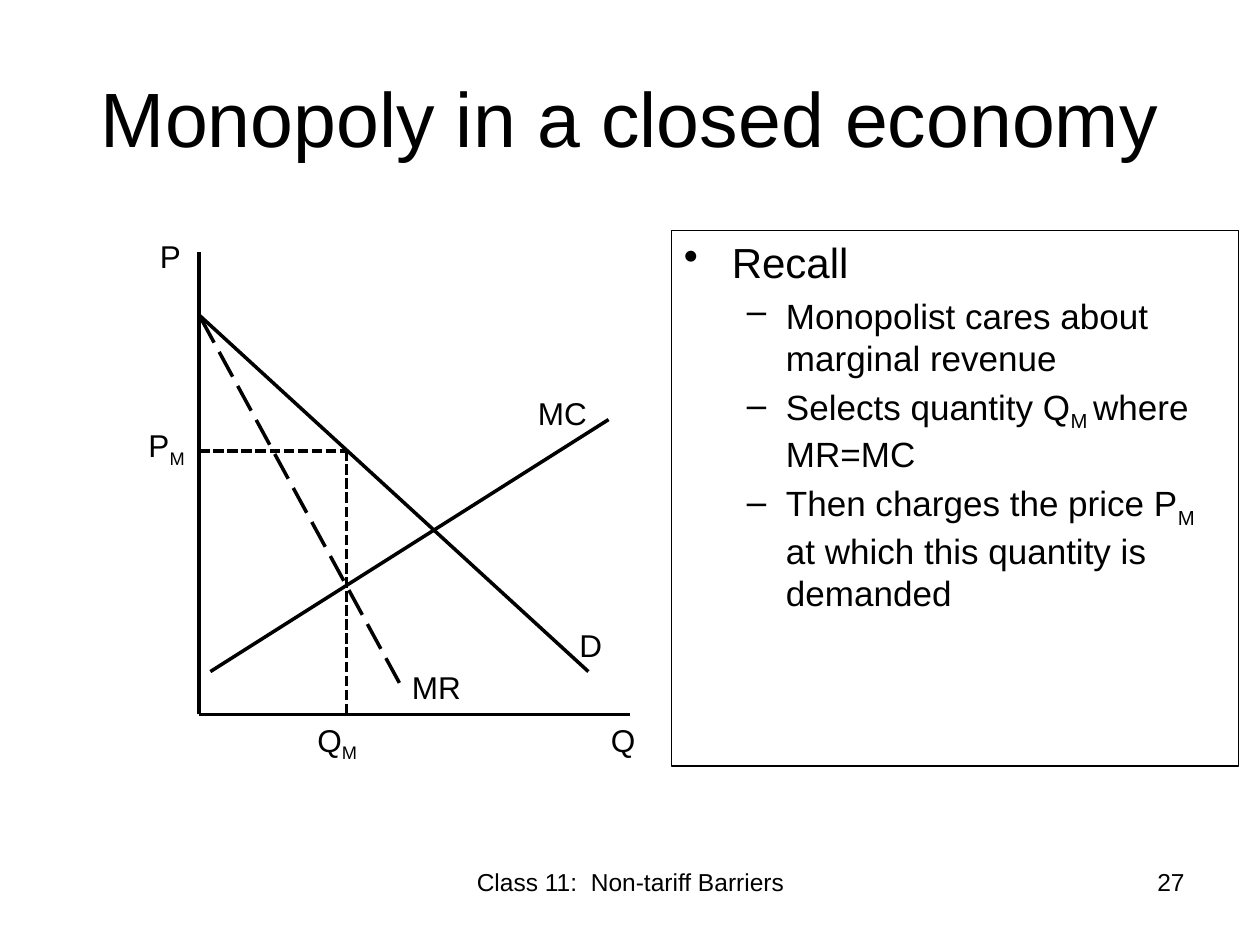
from lxml import etree
from pptx import Presentation
from pptx.dml.color import RGBColor
from pptx.enum import dml, shapes, text
from pptx.oxml.ns import qn
from pptx.util import Inches, Pt

BLACK = RGBColor(0, 0, 0)

deck = Presentation()
deck.slide_width, deck.slide_height = Inches(10), Inches(7.5)
slide = deck.slides.add_slide(deck.slide_layouts[6])


def write(paragraph, wording, size, align=text.PP_ALIGN.LEFT):
    """Fill a paragraph; pieces between ~ marks become subscripts."""
    paragraph.alignment = align
    paragraph.font.name = "Arial"
    paragraph.font.size = Pt(size)
    paragraph.font.color.rgb = BLACK
    for i, piece in enumerate(wording.split("~")):
        if piece:
            run = paragraph.add_run()
            run.text = piece
            if i % 2:
                run.font._element.set("baseline", "-25000")


def add_label(left, top, width, height, wording, size, align=text.PP_ALIGN.LEFT):
    box = slide.shapes.add_textbox(Inches(left), Inches(top), Inches(width), Inches(height))
    box.text_frame.word_wrap = True
    write(box.text_frame.paragraphs[0], wording, size, align)
    return box


# Title and footer
title = add_label(0.5, 0.3, 9, 1.25, "Monopoly in a closed economy", 44, text.PP_ALIGN.CENTER)
title.text_frame.vertical_anchor = text.MSO_ANCHOR.MIDDLE
add_label(3.42, 6.83, 3.17, 0.52, "Class 11:  Non-tariff Barriers", 14, text.PP_ALIGN.CENTER)
add_label(7.17, 6.83, 2.33, 0.52, "27", 14, text.PP_ALIGN.RIGHT)

# Axes, curves and monopoly price and quantity guides
origin = (1.58, 5.67)
choke_price = (1.58, 2.5)
monopoly_point = (2.75, 3.58)
LONG_DASH, SHORT_DASH = dml.MSO_LINE.LONG_DASH, dml.MSO_LINE.SQUARE_DOT
for start, end, dash in [
    (origin, (5, origin[1]), None),
    (origin, (origin[0], 2), None),
    ((4.67, 5.33), choke_price, None),  # demand
    ((4.83, 3.33), (1.67, 5.33), None),  # marginal cost
    ((3.17, 5.42), choke_price, LONG_DASH),  # marginal revenue
    ((origin[0], monopoly_point[1]), monopoly_point, SHORT_DASH),
    ((monopoly_point[0], origin[1]), monopoly_point, SHORT_DASH),
]:
    curve = slide.shapes.add_connector(
        shapes.MSO_CONNECTOR.STRAIGHT, *(Inches(v) for v in start + end))
    curve.line.color.rgb = BLACK
    curve.line.width = Pt(2)
    if dash:
        curve.line.dash_style = dash
    etree.SubElement(curve._element.spPr, qn("a:effectLst"))

# Diagram labels
for left, top, wording in [
    (1.17, 1.83, "P"),
    (4.75, 5.67, "Q"),
    (4.17, 3.08, "MC"),
    (3.17, 5.25, "MR"),
    (4.5, 4.92, "D"),
    (2.42, 5.67, "Q~M~"),
    (1.08, 3.33, "P~M~"),
]:
    add_label(left, top, 0.75, 0.4, wording, 18)

# Recall panel
recall = slide.shapes.add_shape(
    shapes.MSO_SHAPE.RECTANGLE, Inches(5.33), Inches(1.83), Inches(4.5), Inches(4.25))
recall.shadow.inherit = False
recall.fill.background()
recall.line.color.rgb = BLACK
recall.line.width = Pt(0.75)
recall.text_frame.word_wrap = True
recall.text_frame.vertical_anchor = text.MSO_ANCHOR.TOP
for i, (level, wording) in enumerate([
    (0, "Recall"),
    (1, "Monopolist cares about marginal revenue"),
    (1, "Selects quantity Q~M ~where MR=MC"),
    (1, "Then charges the price P~M ~at which this quantity is demanded"),
]):
    point = recall.text_frame.add_paragraph() if i else recall.text_frame.paragraphs[0]
    size, indent, hanging, bullet = [(24, 0.38, 0.38, "•"), (20, 0.81, 0.31, "–")][level]
    write(point, wording, size)
    point.level = level
    point.space_before = Pt(size * 0.2)
    properties = point._p.get_or_add_pPr()
    properties.set("marL", str(Inches(indent)))
    properties.set("indent", str(-Inches(hanging)))
    mark = etree.Element(qn("a:buChar"), char=bullet)
    properties.find(qn("a:defRPr")).addprevious(mark)

deck.save("out.pptx")
